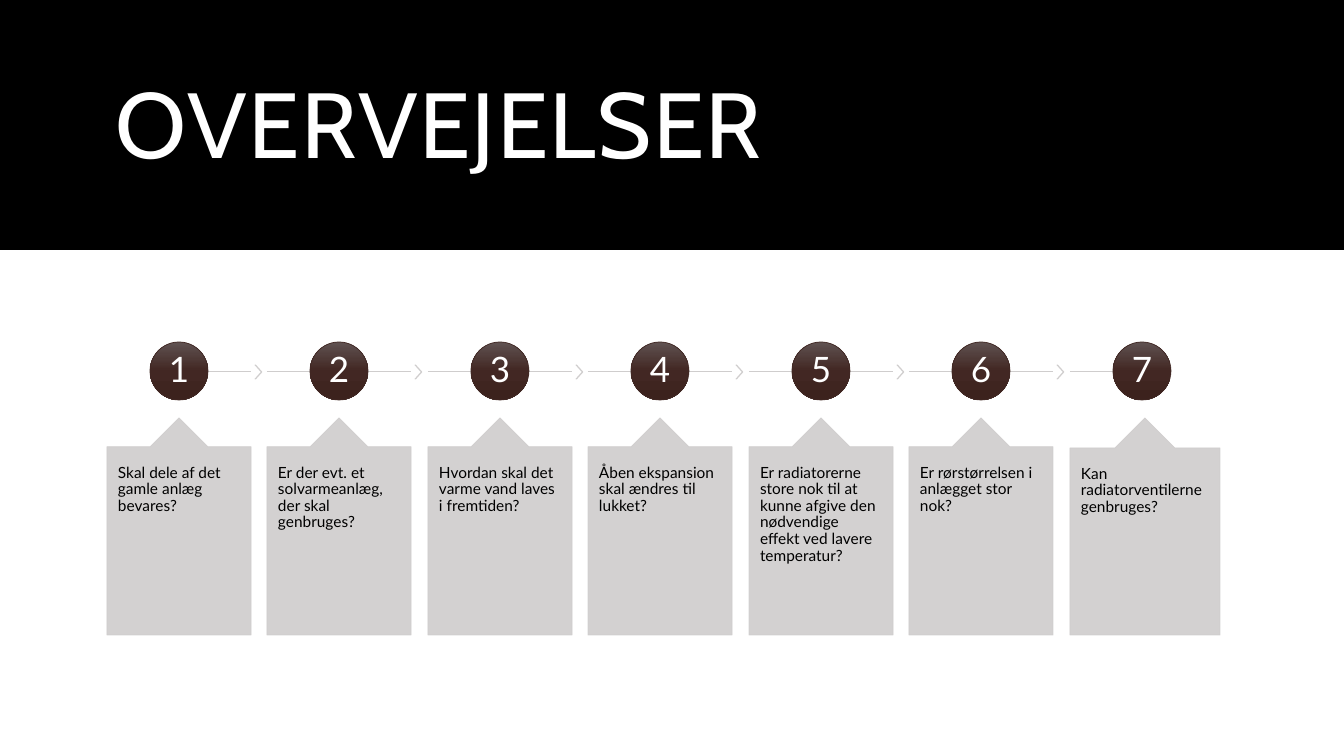
"""Build the "Overvejelser" slide: seven numbered considerations on a timeline."""
import pptx
import pptx.dml.color
import pptx.enum.shapes
import pptx.enum.text
import pptx.oxml
import pptx.oxml.ns
import pptx.util

RGBColor = pptx.dml.color.RGBColor
MSO_SHAPE = pptx.enum.shapes.MSO_SHAPE
PP_ALIGN = pptx.enum.text.PP_ALIGN
MSO_ANCHOR = pptx.enum.text.MSO_ANCHOR

BLACK = RGBColor(0x00, 0x00, 0x00)
WHITE = RGBColor(0xFF, 0xFF, 0xFF)
GREY = RGBColor(0xCF, 0xCD, 0xCD)
BROWN_TOP = RGBColor(0x5F, 0x52, 0x51)
BROWN_MID = RGBColor(0x42, 0x27, 0x23)
BROWN_END = RGBColor(0x3C, 0x22, 0x1D)
BROWN_LINE = RGBColor(0x41, 0x28, 0x24)

PX = 914400 / 100.8
NS = 'xmlns:a="http://schemas.openxmlformats.org/drawingml/2006/main"'
PITCH = 160.5
QUESTIONS = [
    "Skal dele af det gamle anlæg bevares?",
    "Er der evt. et solvarmeanlæg, der skal genbruges?",
    "Hvordan skal det varme vand laves i fremtiden?",
    "Åben ekspansion skal ændres til lukket?",
    "Er radiatorerne store nok til at kunne afgive den nødvendige effekt ved lavere temperatur?",
    "Er rørstørrelsen i anlægget stor nok?",
    "Kan radiatorventilerne genbruges?",
]


def add_box(kind, x, y, w, h, color, line=None):
    """Add a preset shape with a plain fill; the grey ones are slightly transparent."""
    sp = slide.shapes.add_shape(kind, *[round(v * PX) for v in (x, y, w, h)])
    sp.shadow.inherit = False
    sp.fill.solid()
    sp.fill.fore_color.rgb = color
    if line is None:
        sp.line.fill.background()
    else:
        sp.line.color.rgb = line
        sp.line.width = pptx.util.Pt(0.5)
    if color == GREY:
        for clr in sp._element.spPr.iter(pptx.oxml.ns.qn("a:srgbClr")):
            clr.append(pptx.oxml.parse_xml(f'<a:alpha {NS} val="90000"/>'))
    return sp


def write(sp, text, font, size, color, align, anchor, inset_x, inset_y):
    """Put one formatted run into a shape and return the run."""
    tf = sp.text_frame
    tf.word_wrap = True
    tf.auto_size = pptx.enum.text.MSO_AUTO_SIZE.NONE
    tf.vertical_anchor = anchor
    tf.margin_left = tf.margin_right = round(inset_x * PX)
    tf.margin_top = tf.margin_bottom = round(inset_y * PX)
    p = tf.paragraphs[0]
    p.alignment = align
    p.line_spacing = 0.9
    r = p.add_run()
    r.text = text
    r.font.name = font
    r.font.size = pptx.util.Pt(size)
    r.font.color.rgb = color
    return r


prs = pptx.Presentation()
prs.slide_width = round(1344 * PX)
prs.slide_height = round(756 * PX)
slide = prs.slides.add_slide(prs.slide_layouts[5])

band = add_box(MSO_SHAPE.RECTANGLE, 0, 0, 1344, 250, BLACK)
slide.shapes._spTree.insert(2, band._element)

title = slide.shapes.title
title.left, title.top, title.width, title.height = [round(v * PX) for v in (106, 35, 1132, 187)]
r = write(title, "OVERVEJELSER", "Cabin", 66, WHITE, PP_ALIGN.LEFT, MSO_ANCHOR.MIDDLE, 10, 5)
r.font._element.set("spc", "120")

stops = "".join(
    f'<a:gs pos="{pos}"><a:srgbClr val="{color}"/></a:gs>'
    for pos, color in ((0, BROWN_TOP), (50000, BROWN_MID), (100000, BROWN_END))
)
last = len(QUESTIONS) - 1

for i, question in enumerate(QUESTIONS):
    x = int(107 + i * PITCH)
    center = x + 72
    width = 150 if i == last else 144

    start = center if i == 0 else x
    end = center if i == last else x + 144
    rule = slide.shapes.add_connector(
        pptx.enum.shapes.MSO_CONNECTOR.STRAIGHT,
        *[round(v * PX) for v in (start, 371, end, 371)])
    rule.line.color.rgb = GREY
    rule.line.width = pptx.util.Pt(0.5)
    rule._element.spPr.append(pptx.oxml.parse_xml(f"<a:effectLst {NS}/>"))

    if i < last:
        chevron = add_box(MSO_SHAPE.CHEVRON, x + 148, 365, 7, 14, GREY, GREY)
        chevron.adjustments[0] = 0.9

    circle = add_box(MSO_SHAPE.OVAL, center - 29, 342, 58, 58, BROWN_MID, BROWN_LINE)
    solid = circle._element.spPr.find(pptx.oxml.ns.qn("a:solidFill"))
    solid.getparent().replace(solid, pptx.oxml.parse_xml(
        f'<a:gradFill {NS} rotWithShape="1"><a:gsLst>{stops}</a:gsLst>'
        '<a:lin ang="5400000" scaled="0"/></a:gradFill>'))
    write(circle, str(i + 1), "Lato", 25, WHITE, PP_ALIGN.CENTER, MSO_ANCHOR.MIDDLE, 2, 2)

    callout = add_box(MSO_SHAPE.UP_ARROW_CALLOUT, x, 418, width, 217, GREY, GREY)
    for n, value in enumerate((0.5, 0.2, 0.2, 1)):
        callout.adjustments[n] = value
    write(callout, question, "Lato", 11, BLACK, PP_ALIGN.LEFT, MSO_ANCHOR.TOP, 11, 18)

prs.save("out.pptx")
